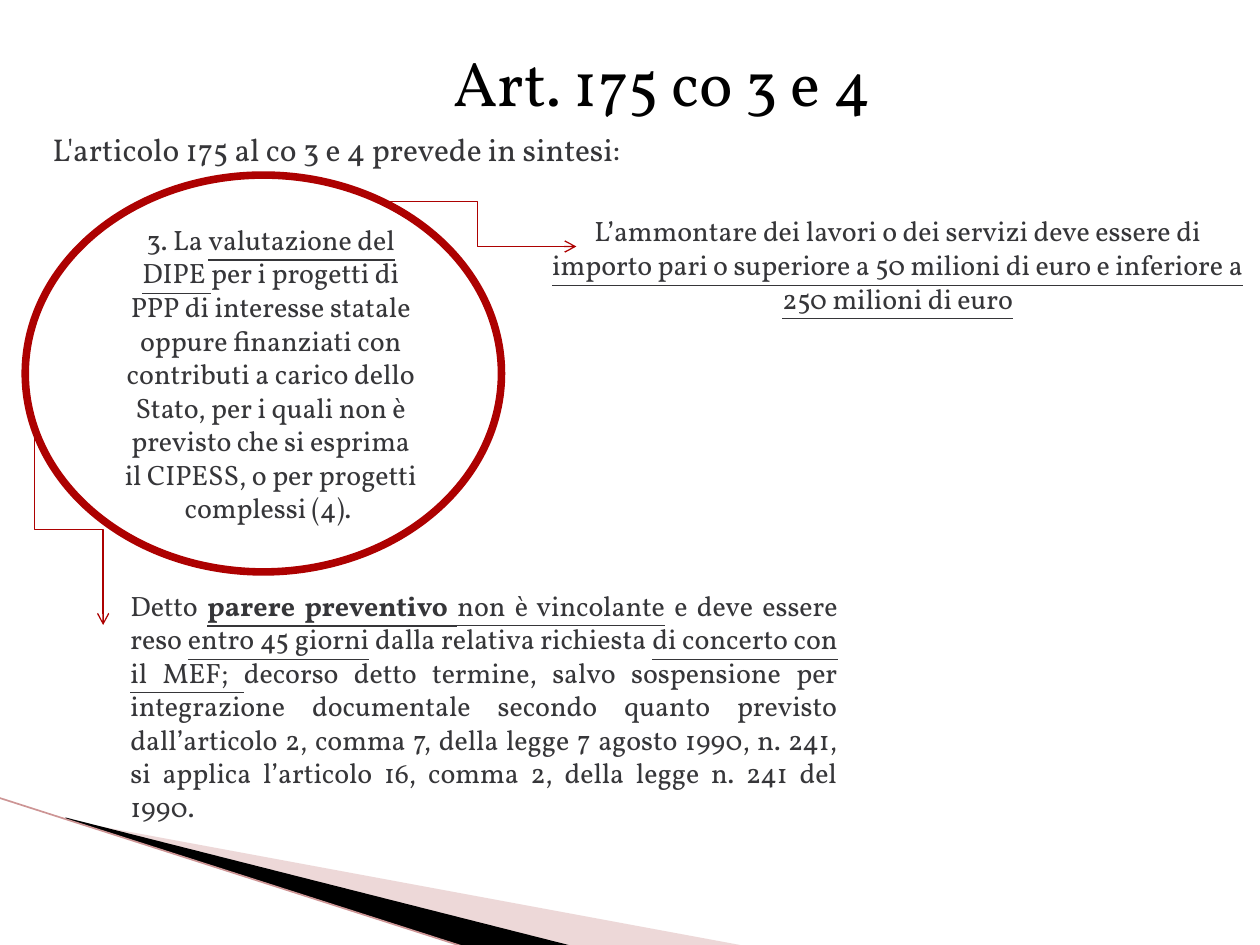
from lxml.etree import SubElement
from pptx import Presentation
from pptx.dml.color import RGBColor
from pptx.enum.shapes import MSO_CONNECTOR, MSO_SHAPE
from pptx.enum.text import MSO_ANCHOR, MSO_AUTO_SIZE, PP_ALIGN
from pptx.oxml.ns import qn
from pptx.util import Cm, Pt

COLORS = {"title": "000000", "text": "363639", "accent": "AD0101", "paper": "FFFFFF",
          "pale": "D29E9E", "dark": "000000", "edge": "CD9595"}
FONT = "Vollkorn"
INDENT = Cm(0.3)


def color(name):
    return RGBColor.from_string(COLORS[name])


def write(frame, runs, size, align, color_name="text", indent=0):
    """Fill the first paragraph with (text, style) runs; style holds b and/or u."""
    paragraph = frame.paragraphs[0]
    paragraph.alignment = align
    if indent:
        properties = paragraph._p.get_or_add_pPr()
        properties.set("marL", str(indent))
        properties.set("indent", "0")
    for text, style in runs:
        run = paragraph.add_run()
        run.text = text
        run.font.name = FONT
        run.font.size = Pt(size)
        run.font.color.rgb = color(color_name)
        run.font.bold = "b" in style
        run.font.underline = "u" in style


def add_text(slide, box, runs, size, align, indent=0):
    frame = slide.shapes.add_textbox(*map(Cm, box)).text_frame
    frame.word_wrap = True
    frame.auto_size = MSO_AUTO_SIZE.SHAPE_TO_FIT_TEXT
    write(frame, runs, size, align, indent=indent)


def add_line(slide, kind, start, end, color_name, width):
    line = slide.shapes.add_connector(kind, *map(Cm, start + end))
    line.line.color.rgb = color(color_name)
    line.line.width = Pt(width)
    SubElement(line._element.spPr, qn("a:effectLst"))
    return line


def add_elbow_arrow(slide, box, downward=False):
    """Elbow from the box's top left to its bottom right; downward leaves vertically."""
    left, top, width, height = box
    if downward:
        # A quarter turn with a mirror swaps the two sides around the same centre
        left, top = left + (width - height) / 2, top + (height - width) / 2
        width, height = height, width
    arrow = add_line(slide, MSO_CONNECTOR.ELBOW, (left, top),
                     (left + width, top + height), "accent", 0.75)
    if downward:
        transform = arrow._element.spPr.find(qn("a:xfrm"))
        transform.set("rot", str(270 * 60000))
        transform.set("flipH", "1")
    SubElement(arrow.line._get_or_add_ln(), qn("a:tailEnd"), type="arrow")


def add_wedge(slide, box, points, color_name, opacity=100):
    left, top = box[:2]
    corners = [(Cm(left + x), Cm(top + y)) for x, y in points]
    builder = slide.shapes.build_freeform(*corners[0], scale=1.0)
    builder.add_line_segments(corners[1:], close=True)
    wedge = builder.convert_to_shape()
    wedge.shadow.inherit = False
    wedge.fill.solid()
    wedge.fill.fore_color.rgb = color(color_name)
    wedge.line.fill.background()
    if opacity < 100:
        fill_color = wedge._element.spPr.find(qn("a:solidFill"))[0]
        SubElement(fill_color, qn("a:alpha"), val=str(opacity * 1000))


def add_corner_decoration(slide, box):
    left, top, width, height = box
    add_wedge(slide, box, [(1.4, 0.46), (15.11, 3), (11.58, 3), (1.4, 0.44)], "pale", 40)
    add_wedge(slide, box, [(1.35, 0.4), (11.61, 3), (9.45, 3.02), (1.37, 0.43)], "dark")
    add_line(slide, MSO_CONNECTOR.STRAIGHT, (left, top),
             (left + 9.42, top + height), "edge", 0.95)


def add_title(slide, box):
    title = slide.shapes.title
    title.left, title.top, title.width, title.height = map(Cm, box)
    frame = title.text_frame
    frame.word_wrap = False
    frame.auto_size = MSO_AUTO_SIZE.SHAPE_TO_FIT_TEXT
    frame.vertical_anchor = MSO_ANCHOR.TOP
    write(frame, [("Art. 175 co 3 e 4", "")], 36, PP_ALIGN.LEFT, "title")


def add_evaluation(slide, box):
    """Ellipse with the rule and the two arrows that leave it."""
    left, top, width, height = box
    ellipse = slide.shapes.add_shape(MSO_SHAPE.OVAL, *map(Cm, box))
    ellipse.shadow.inherit = False
    ellipse.fill.solid()
    ellipse.fill.fore_color.rgb = color("paper")
    ellipse.line.color.rgb = color("accent")
    ellipse.line.width = Pt(4.33)
    ellipse.text_frame.word_wrap = True
    ellipse.text_frame.vertical_anchor = MSO_ANCHOR.MIDDLE
    write(ellipse.text_frame, [
        ("3. La ", ""),
        ("valutazione del DIPE ", "u"),
        ("per i progetti di PPP di interesse statale oppure finanziati con contributi "
         "a carico dello Stato, per i quali non è previsto che si esprima il CIPESS, "
         "o per progetti complessi (4). ", ""),
    ], 16, PP_ALIGN.CENTER, indent=INDENT)
    add_elbow_arrow(slide, (left + 7.11, top + 0.53, 4, 0.91))
    add_elbow_arrow(slide, (left + 0.18, top + 5.21, 1.39, 3.86), downward=True)


def add_opinion(slide, box):
    add_text(slide, box, [
        ("Detto ", ""),
        ("parere preventivo ", "bu"),
        ("non è vincolante", "u"),
        (" e deve essere reso ", ""),
        ("entro 45 giorni", "u"),
        (" dalla relativa richiesta ", ""),
        ("di concerto con il MEF; ", "u"),
        ("decorso detto termine, salvo sospensione per integrazione documentale secondo "
         "quanto previsto dall’articolo 2, comma 7, della legge 7 agosto 1990, n. 241, "
         "si applica l’articolo 16, comma 2, della legge n. 241 del 1990.", ""),
    ], 16, PP_ALIGN.JUSTIFY, INDENT)


def add_amount(slide, box):
    add_text(slide, box, [
        ("L’ammontare dei lavori o dei servizi deve essere di ", ""),
        ("importo pari o superiore a 50 milioni di euro e inferiore a "
         "250 milioni di euro", "u"),
    ], 16, PP_ALIGN.CENTER)


def main():
    presentation = Presentation()
    presentation.slide_width, presentation.slide_height = Cm(25.4), Cm(19.05)
    slide = presentation.slides.add_slide(presentation.slide_layouts[5])

    add_corner_decoration(slide, (-0.03, 16.08, 15.14, 3.02))
    add_title(slide, (8.89, 0.74, 9.78, 1.8))
    add_evaluation(slide, (0.51, 3.53, 9.6, 8))
    add_text(slide, (0.51, 2.49, 21.21, 1.02),
             [("L'articolo 175 al co 3 e 4 prevede in sintesi: ", "")],
             18, PP_ALIGN.JUSTIFY, INDENT)
    add_opinion(slide, (2.08, 11.73, 15.06, 5.05))
    add_amount(slide, (10.8, 4.19, 14.6, 2.31))

    presentation.save("out.pptx")


if __name__ == "__main__":
    main()
